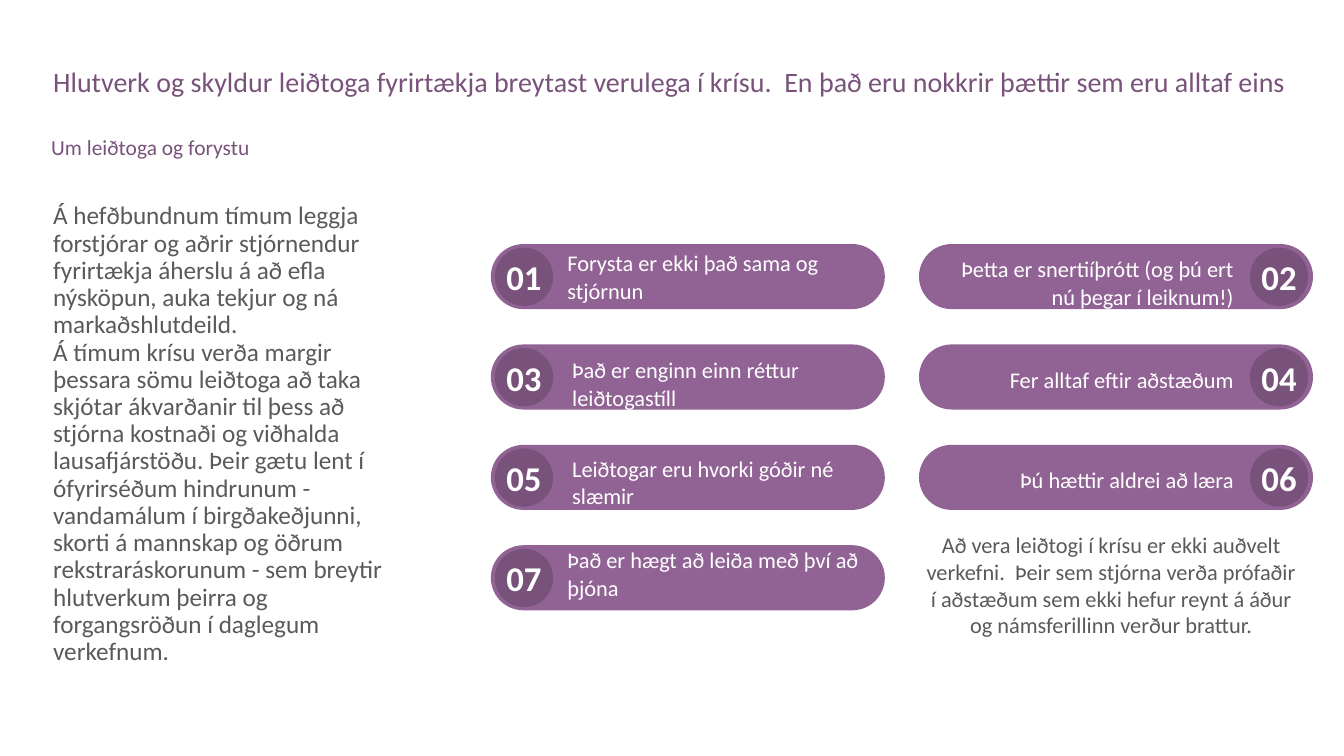
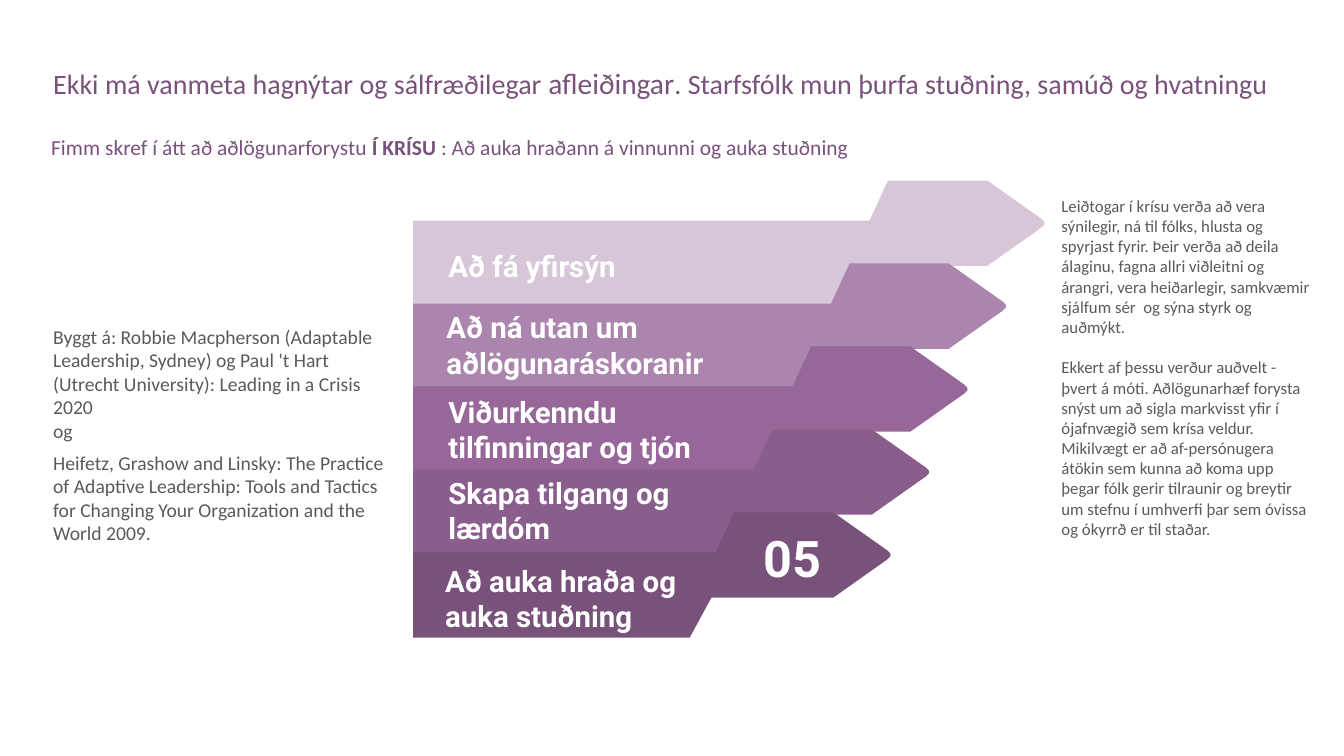
"""Build two slides on leadership in a crisis."""
import pptx
import pptx.dml.color
import pptx.enum.shapes
import pptx.enum.text
import pptx.util

Cm = pptx.util.Cm
Pt = pptx.util.Pt
ALIGN = pptx.enum.text.PP_ALIGN
ANCHOR = pptx.enum.text.MSO_ANCHOR
SHAPE = pptx.enum.shapes.MSO_SHAPE


class Theme:
    plum = "79527B"
    mauve = "916395"
    gray = "595A59"
    white = "FFFFFF"
    steps = ("D7C6D8", "AB85AD", "976799", "895E8C", "79527B")
    body_font = "Calibri"
    step_font = "Roboto"
    title = 20
    title_accent = 21
    subtitle = 15.3
    body = 18
    source = 14
    note = 12
    label = 16
    number = 24.8
    step = 21
    step_number = 36


def write(frame, lines, size, color, font=Theme.body_font, bold=False,
          align=ALIGN.LEFT, spacing=1.0, anchor=ANCHOR.TOP, inset=(0.25, 0.13)):
    """Fill a text frame; every line is a list of runs."""
    frame.word_wrap = True
    frame.vertical_anchor = anchor
    frame.margin_left = frame.margin_right = Cm(inset[0])
    frame.margin_top = frame.margin_bottom = Cm(inset[1])
    frame.text = "\n".join(line[0] for line in lines)
    for paragraph, line in zip(frame.paragraphs, lines):
        for extra in line[1:]:
            paragraph.add_run().text = extra
        paragraph.alignment = align
        paragraph.line_spacing = spacing
        for run in paragraph.runs:
            run.font.name = font
            run.font.size = Pt(size)
            run.font.bold = bold
            run.font.color.rgb = pptx.dml.color.RGBColor.from_string(color)
    return frame.paragraphs


def paint(shape, color):
    """Give a shape a flat fill without outline or shadow."""
    shape.shadow.inherit = False
    shape.fill.solid()
    shape.fill.fore_color.rgb = pptx.dml.color.RGBColor.from_string(color)
    shape.line.fill.background()


deck = pptx.Presentation()
deck.slide_width = Cm(33.87)
deck.slide_height = Cm(19.05)

pages = [
    (["Hlutverk og skyldur leiðtoga fyrirtækja breytast verulega í krísu.  "
      "En það eru nokkrir þættir sem eru alltaf eins"],
     ["Um leiðtoga og forystu"],
     [["Á hefðbundnum tímum leggja forstjórar og aðrir stjórnendur fyrirtækja áherslu á "
       "að efla nýsköpun, auka tekjur og ná markaðshlutdeild."],
      ["Á tímum krísu verða margir þessara sömu leiðtoga að taka skjótar ákvarðanir til "
       "þess að stjórna kostnaði og viðhalda lausafjárstöðu. Þeir gætu lent í ófyrirséðum "
       "hindrunum - vandamálum í birgðakeðjunni, skorti á mannskap og öðrum "
       "rekstraráskorunum - sem breytir hlutverkum þeirra og forgangsröðun í daglegum "
       "verkefnum."]],
     Theme.body, 0.9),
    (["Ekki má vanmeta hagnýtar og sálfræðilegar ", "afleiðingar",
      ". Starfsfólk mun þurfa stuðning, samúð og hvatningu"],
     ["Fimm skref í átt að aðlögunarforystu ", "Í KRÍSU ",
      ": Að auka hraðann á vinnunni og auka stuðning"],
     [["Byggt á: Robbie Macpherson (Adaptable Leadership, Sydney) og Paul 't Hart "
       "(Utrecht University): Leading in a Crisis 2020"],
      ["og"],
      ["Heifetz, Grashow and Linsky: The Practice of Adaptive Leadership: Tools and "
       "Tactics for Changing Your Organization and the World 2009."]],
     Theme.source, 1.0),
]

slides = []
for title_runs, subtitle_runs, body_lines, body_size, body_spacing in pages:
    slide = deck.slides.add_slide(deck.slide_layouts[6])
    boxes = slide.shapes
    body = write(boxes.add_textbox(Cm(1.09), Cm(4.55), Cm(8.86), Cm(12.8)).text_frame,
                 body_lines, body_size, Theme.gray, spacing=body_spacing,
                 anchor=ANCHOR.MIDDLE)
    title = write(boxes.add_textbox(Cm(1.09), Cm(1.6), Cm(31.85), Cm(1.63)).text_frame,
                  [title_runs], Theme.title, Theme.plum, spacing=0.9)
    subtitle = write(boxes.add_textbox(Cm(1.04), Cm(3.43), Cm(31.9), Cm(0.71)).text_frame,
                     [subtitle_runs], Theme.subtitle, Theme.plum, spacing=0.7)
    slides.append(slide)
body[2].space_before = Pt(6)
title[0].runs[1].font.size = Pt(Theme.title_accent)
subtitle[0].runs[1].font.bold = True

principles_slide, steps_slide = slides

principles = [
    ("Forysta er ekki það sama og stjórnun", 14.05, 6.12, 1.68),
    ("Þetta er snertiíþrótt (og þú ert nú þegar í leiknum!)", 23.39, 6.27, 1.68),
    ("Það er enginn einn réttur leiðtogastíll", 14.17, 8.81, 1.68),
    ("Fer alltaf eftir aðstæðum", 23.39, 9.07, 0.97),
    ("Leiðtogar eru hvorki góðir né slæmir", 14.17, 11.3, 1.68),
    ("Þú hættir aldrei að læra", 23.39, 11.58, 0.97),
    ("Það er hægt að leiða með því að þjóna", 14.05, 13.61, 1.68),
]
for index, (principle, label_left, label_top, label_height) in enumerate(principles):
    row, column = divmod(index, 2)
    top = 6.15 + 2.53 * row
    pill = principles_slide.shapes.add_shape(
        SHAPE.ROUNDED_RECTANGLE, Cm((12.37, 23.16)[column]), Cm(top), Cm(9.93), Cm(1.64))
    pill.adjustments[0] = 0.5
    paint(pill, Theme.mauve)
    badge = principles_slide.shapes.add_shape(
        SHAPE.OVAL, Cm((12.47, 31.5)[column]), Cm(top + 0.09), Cm(1.47), Cm(1.47))
    paint(badge, Theme.plum)
    write(badge.text_frame, [[f"{index + 1:02}"]], Theme.number, Theme.white, bold=True,
          align=ALIGN.CENTER, anchor=ANCHOR.MIDDLE, inset=(0, 0))
    badge.text_frame.word_wrap = False
    label = principles_slide.shapes.add_textbox(
        Cm(label_left), Cm(label_top), Cm(7.95), Cm(label_height))
    write(label.text_frame, [[principle]], Theme.label, Theme.white,
          align=(ALIGN.LEFT, ALIGN.RIGHT)[column], spacing=1.04)

conclusion = principles_slide.shapes.add_textbox(Cm(23.04), Cm(13.28), Cm(9.93), Cm(2.97))
write(conclusion.text_frame,
      [["Að vera leiðtogi í krísu er ekki auðvelt verkefni.  Þeir sem stjórna verða "
        "prófaðir í aðstæðum sem ekki hefur reynt á áður og námsferillinn verður brattur."]],
      Theme.label, Theme.gray, align=ALIGN.CENTER, inset=(0.23, 0.1))

steps = [
    ("Að fá yfirsýn", 11.05, 6.12, 7.21, 1.14),
    ("Að ná utan um aðlögunaráskoranir", 11.0, 7.67, 10.06, 2.06),
    ("Viðurkenndu tilfinningar og tjón", 11.05, 9.8, 8.0, 2.06),
    ("Skapa tilgang og lærdóm", 11.05, 11.84, 6.71, 2.06),
    ("Að auka hraða og auka stuðning", 10.97, 14.05, 6.53, 2.06),
]
arrow_outline = [(0.99, 0), (3.49, 0), (4.85, 0.96), (4.93, 1.04),
                 (4.93, 1.11), (4.85, 1.19), (3.49, 2.15), (0, 2.15)]
for index, color in enumerate(Theme.steps):
    top = 5.56 + 2.09 * index
    arrow_left = 21.39 - 0.97 * index
    bar = [(10.41, top), (22.43 - 0.97 * index, top),
           (21.34 - 0.99 * index, top + 2.15), (10.41, top + 2.15)]
    arrow = [(arrow_left + x, top - 1.01 + y) for x, y in arrow_outline]
    for outline in (bar, arrow):
        points = [(Cm(x), Cm(y)) for x, y in outline]
        builder = steps_slide.shapes.build_freeform(*points[0])
        builder.add_line_segments(points[1:], close=True)
        paint(builder.convert_to_shape(), color)

for step, left, top, width, height in steps:
    label = steps_slide.shapes.add_textbox(Cm(left), Cm(top), Cm(width), Cm(height))
    write(label.text_frame, [[step]], Theme.step, Theme.white, Theme.step_font, bold=True)

step_number = steps_slide.shapes.add_textbox(Cm(18.97), Cm(13.16), Cm(2.01), Cm(1.8))
write(step_number.text_frame, [["05"]], Theme.step_number, Theme.white, Theme.step_font,
      bold=True, align=ALIGN.CENTER)

advice = steps_slide.shapes.add_textbox(Cm(26.52), Cm(4.83), Cm(6.76), Cm(9.47))
advice_lines = write(
    advice.text_frame,
    [["Leiðtogar í krísu verða að vera sýnilegir, ná til fólks, hlusta og spyrjast fyrir. "
      "Þeir verða að deila álaginu, fagna allri viðleitni og árangri, vera heiðarlegir, "
      "samkvæmir sjálfum sér  og sýna styrk og auðmýkt."],
     ["Ekkert af þessu verður auðvelt - þvert á móti. Aðlögunarhæf forysta snýst um að "
      "sigla markvisst yfir í ójafnvægið sem krísa veldur. Mikilvægt er að af-persónugera "
      "átökin sem kunna að koma upp þegar fólk gerir tilraunir og breytir um stefnu í "
      "umhverfi þar sem óvissa og ókyrrð er til staðar."]],
    Theme.note, Theme.gray, inset=(0.23, 0.1))
advice_lines[1].space_before = Pt(14.6)

deck.save("out.pptx")
